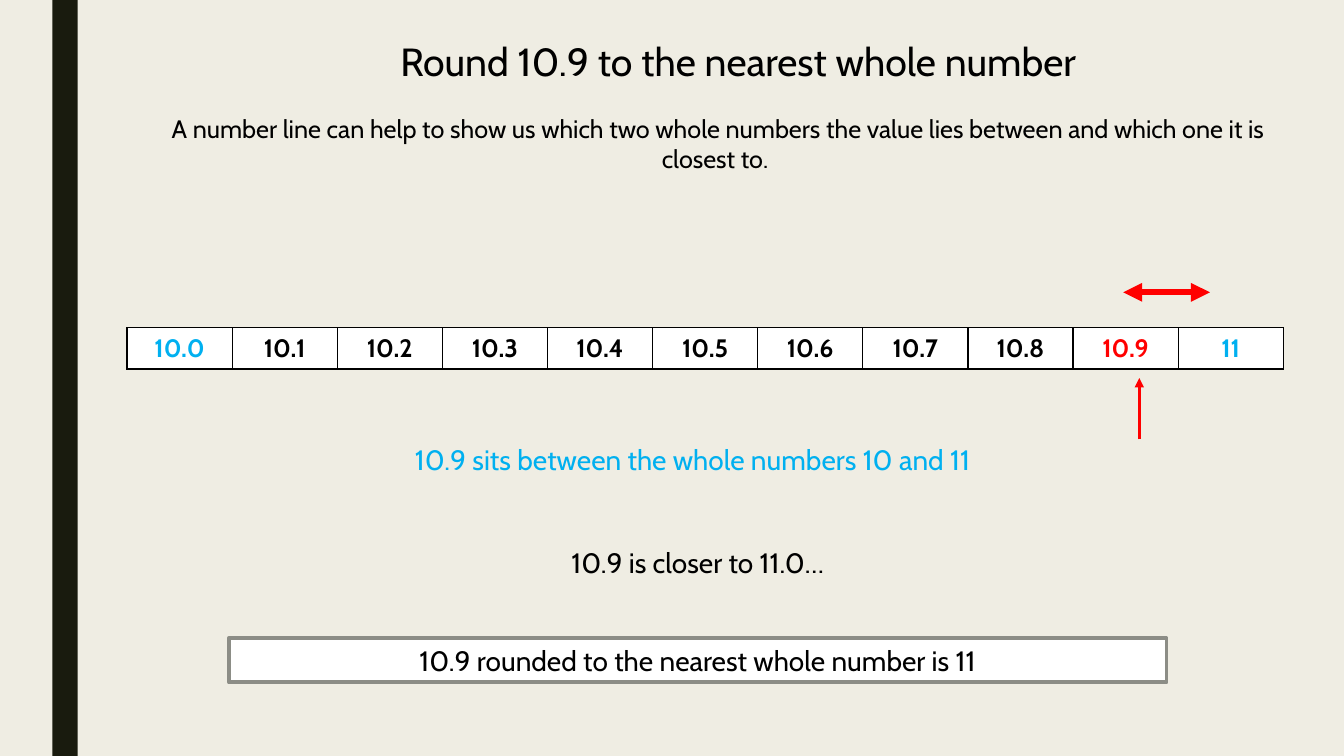
"""Build a slide on rounding 10.9 to the nearest whole number with a number line."""
from lxml.etree import SubElement
from pptx import Presentation
from pptx.dml.color import RGBColor
from pptx.enum.shapes import MSO_CONNECTOR as Connector, MSO_SHAPE as Shape
from pptx.enum.text import MSO_ANCHOR as Anchor, MSO_AUTO_SIZE as AutoSize, PP_ALIGN as Align
from pptx.oxml.ns import qn
from pptx.util import Inches, Pt

BLACK = RGBColor(0, 0, 0)
WHITE = RGBColor(0xFF, 0xFF, 0xFF)
RED = RGBColor(0xFF, 0, 0)
BLUE = RGBColor(0, 0xB0, 0xF0)
GREY = RGBColor(0x8C, 0x8D, 0x86)
CREAM = RGBColor(0xEF, 0xED, 0xE3)
DARK = RGBColor(0x19, 0x1B, 0x0E)
FONT = "Cabin"

TITLE = "Round 10.9 to the nearest whole number"
CONCLUSION = "10.9 rounded to the nearest whole number is 11"
STATEMENTS = [
    ("A number line can help to show us which two whole numbers the value lies "
     "between and which one it is closest to. ", (1.26, 1.07, 11.72, 0.71), 18, BLACK),
    ("10.9 sits between the whole numbers 10 and 11", (2.22, 4.34, 9.3, 0.44), 20, BLUE),
    ("10.9 is closer to 11.0…", (2.27, 5.36, 9.3, 0.44), 20, BLACK),
]
NUMBERS = [f"10.{tenth}" for tenth in range(10)] + ["11"]
HIGHLIGHTS = {"10.0": BLUE, "10.9": RED, "11": BLUE}
LINE_LEFT, LINE_TOP, LINE_WIDTH, LINE_HEIGHT = 1.26, 3.25, 11.47, 0.41
ARROWS = [
    ((11.3, 4.36), (11.3, 3.75), 2.25, ["tailEnd"]),
    ((11.14, 2.9), (12, 2.9), 4.5, ["headEnd", "tailEnd"]),
]


def inches(lengths):
    return [Inches(length) for length in lengths]


def write(frame, words, size, color, bold=False):
    frame.text = words
    paragraph = frame.paragraphs[0]
    paragraph.alignment = Align.CENTER
    font = paragraph.font
    font.name, font.size, font.bold = FONT, Pt(size), bold
    font.color.rgb = color


def add_bar(slide, place, fill):
    bar = slide.shapes.add_shape(Shape.RECTANGLE, *inches(place))
    bar.shadow.inherit = False
    bar.fill.solid()
    bar.fill.fore_color.rgb = fill
    bar.line.fill.background()
    return bar


def add_title(slide):
    title = slide.shapes.title
    title.left, title.top, title.width, title.height = inches((3.81, 0.32, 7.02, 0.57))
    write(title.text_frame, TITLE, 28, BLACK)
    title.text_frame.auto_size = AutoSize.NONE
    title.text_frame.word_wrap = False
    title.text_frame.vertical_anchor = Anchor.TOP


def add_statement(slide, words, place, size, color):
    statement = slide.shapes.add_textbox(*inches(place)).text_frame
    statement.word_wrap = True
    write(statement, words, size, color)


def outline_cell(cell):
    properties = cell._tc.get_or_add_tcPr()
    for position, side in enumerate(("lnL", "lnR", "lnT", "lnB")):
        border = properties.makeelement(qn(f"a:{side}"), {"w": str(Pt(1))})
        properties.insert(position, border)
        fill = SubElement(border, qn("a:solidFill"))
        SubElement(fill, qn("a:srgbClr"), val=str(BLACK))


def add_number_line(slide):
    place = inches((LINE_LEFT, LINE_TOP, LINE_WIDTH, LINE_HEIGHT))
    number_line = slide.shapes.add_table(1, len(NUMBERS), *place).table
    number_line.first_row = number_line.horz_banding = False
    for column, number in enumerate(NUMBERS):
        number_line.columns[column].width = Inches(LINE_WIDTH / len(NUMBERS))
        cell = number_line.cell(0, column)
        cell.fill.solid()
        cell.fill.fore_color.rgb = WHITE
        write(cell.text_frame, number, 18, HIGHLIGHTS.get(number, BLACK), bold=True)
        outline_cell(cell)


def add_arrow(slide, start, end, weight, heads):
    arrow = slide.shapes.add_connector(Connector.STRAIGHT, *inches(start + end))
    arrow.line.color.rgb = RED
    arrow.line.width = Pt(weight)
    stroke = arrow.line._get_or_add_ln()
    for head in heads:
        SubElement(stroke, qn(f"a:{head}"), type="triangle")
    SubElement(arrow._element.spPr, qn("a:effectLst"))


def add_conclusion(slide):
    box = add_bar(slide, (2.27, 6.33, 9.3, 0.44), WHITE)
    box.line.color.rgb = GREY
    box.line.width = Pt(2.75)
    write(box.text_frame, CONCLUSION, 20, BLACK)


def main():
    deck = Presentation()
    deck.slide_width, deck.slide_height = inches((13.33, 7.5))
    slide = deck.slides.add_slide(deck.slide_layouts[5])
    slide.background.fill.solid()
    slide.background.fill.fore_color.rgb = CREAM
    add_bar(slide, (0.52, 0, 0.25, 7.5), DARK)
    add_title(slide)
    for statement in STATEMENTS:
        add_statement(slide, *statement)
    add_number_line(slide)
    for arrow in ARROWS:
        add_arrow(slide, *arrow)
    add_conclusion(slide)
    deck.save("out.pptx")


if __name__ == "__main__":
    main()
